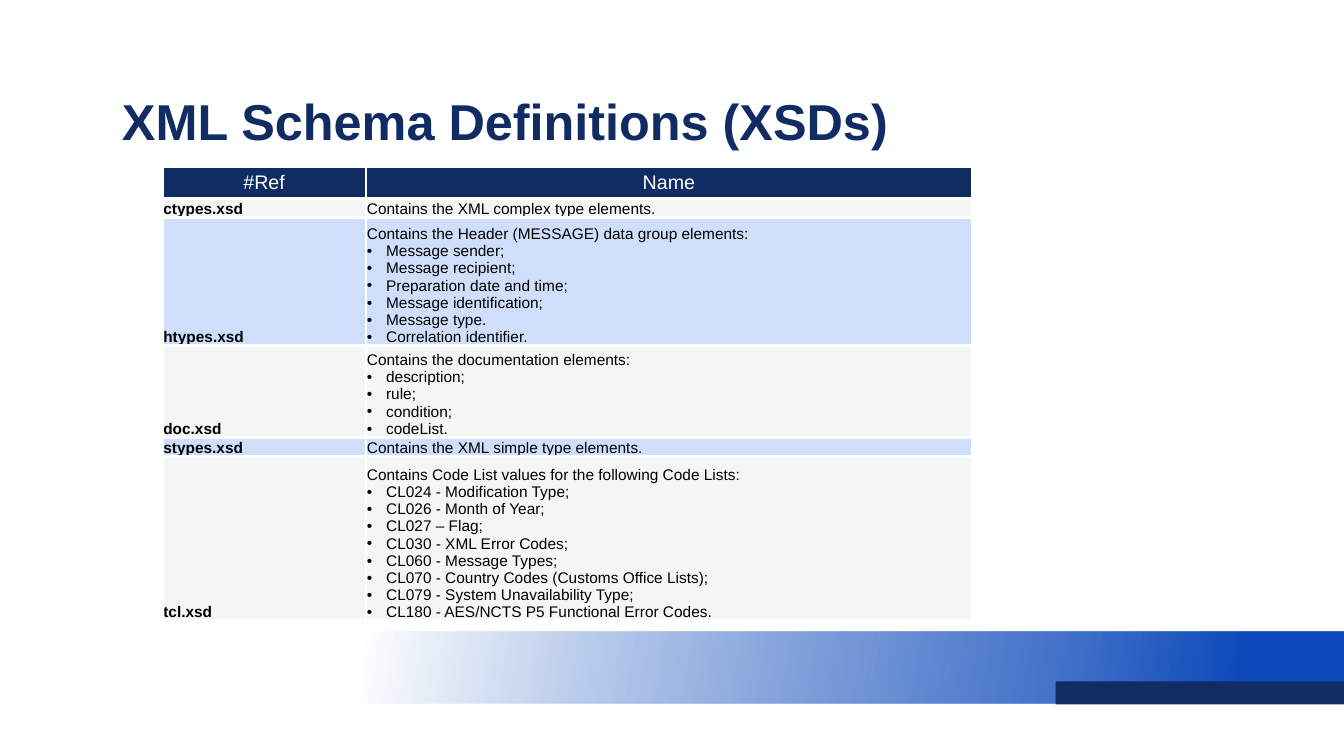
from lxml.etree import SubElement as Sub
from pptx import Presentation
from pptx.dml.color import RGBColor as Rgb
from pptx.enum.shapes import MSO_SHAPE as Shape
from pptx.enum.text import MSO_ANCHOR as Anchor, MSO_AUTO_SIZE as Auto, PP_ALIGN as Align
from pptx.oxml.ns import qn
from pptx.util import Inches, Pt

HUES = {"paper": "FEFFFF", "navy": "112C63", "ink": "000000", "gray": "E7E6E6",
        "sky": "C4D8FB", "blue": "0C49BA", "mid": "3265C5"}

ROWS = [
    ("ctypes.xsd", 0.19, "Contains the XML complex type elements.", []),
    ("htypes.xsd", 1.27, "Contains the Header (MESSAGE) data group elements:",
     ["Message sender;", "Message recipient;", "Preparation date and time;",
      "Message identification;", "Message type.", "Correlation identifier."]),
    ("doc.xsd", 0.91, "Contains the documentation elements:",
     ["description;", "rule;", "condition;", "codeList."]),
    ("stypes.xsd", 0.19, "Contains the XML simple type elements.", []),
    ("tcl.xsd", 1.63, "Contains Code List values for the following Code Lists:",
     ["CL024 - Modification Type;", "CL026 - Month of Year;", "CL027 – Flag;",
      "CL030 - XML Error Codes;", "CL060 - Message Types;",
      "CL070 - Country Codes (Customs Office Lists);",
      "CL079 - System Unavailability Type;",
      "CL180 - AES/NCTS P5 Functional Error Codes."]),
]


def write(para, text, size=11, hue="ink", bold=False, align=Align.LEFT, bullet=False):
    para.alignment = align
    if bullet:
        props = para._p.get_or_add_pPr()
        props.set("marL", str(Inches(0.19)))
        props.set("indent", str(-Inches(0.19)))
        Sub(props, qn("a:buFont"), typeface="Arial")
        Sub(props, qn("a:buChar"), char="•")
    run = para.add_run()
    run.text = text
    font = run.font
    font.name, font.size, font.bold = "Arial", Pt(size), bold
    font.color.rgb = Rgb.from_string(HUES[hue])


class Page:
    def __init__(self, deck):
        self.slide = deck.slides.add_slide(deck.slide_layouts[5])
        self.paint(self.slide.background.fill, "paper")

    def paint(self, fill, hue):
        fill.solid()
        fill.fore_color.rgb = Rgb.from_string(HUES[hue])

    def tint(self, node, hue, alpha):
        color = Sub(node, qn("a:srgbClr"), val=HUES[hue])
        Sub(color, qn("a:alpha"), val=str(alpha * 1000))

    def title(self, text, *box):
        head = self.slide.shapes.title
        head.left, head.top, head.width, head.height = map(Inches, box)
        frame = head.text_frame
        frame.word_wrap, frame.auto_size = True, Auto.NONE
        frame.vertical_anchor = Anchor.MIDDLE
        write(frame.paragraphs[0], text, size=36, hue="navy", bold=True)

    def band(self, hue, *box):
        bar = self.slide.shapes.add_shape(Shape.RECTANGLE, *map(Inches, box))
        bar.shadow.inherit = False
        bar.line.fill.background()
        self.paint(bar.fill, hue)
        return bar

    def fade(self, bar, stops, angle):
        bar.fill.gradient()
        grad = bar._element.spPr.find(qn("a:gradFill"))
        for node in list(grad):
            grad.remove(node)
        group = Sub(grad, qn("a:gsLst"))
        for spot, hue, alpha in stops:
            self.tint(Sub(group, qn("a:gs"), pos=str(spot * 1000)), hue, alpha)
        Sub(grad, qn("a:lin"), ang=str(angle * 60000), scaled="0")

    def cell(self, cell, hue, alpha, anchor, pads):
        cell.vertical_anchor = anchor
        (cell.margin_left, cell.margin_top,
         cell.margin_right, cell.margin_bottom) = map(Inches, pads)
        props = cell._tc.get_or_add_tcPr()
        for side in "LRTB":
            edge = Sub(props, qn("a:ln" + side), w=str(Pt(2.25)))
            self.tint(Sub(edge, qn("a:solidFill")), "paper", 100)
        self.tint(Sub(props, qn("a:solidFill")), hue, alpha)

    def table(self, heads, rows, widths, *spot):
        tall = [0.32] + [row[1] for row in rows]
        size = sum(widths), sum(tall)
        grid = self.slide.shapes.add_table(
            len(tall), len(widths), *map(Inches, spot + size)).table
        grid.first_row = grid.horz_banding = False
        for col, width in zip(grid.columns, widths):
            col.width = Inches(width)
        for row, height in zip(grid.rows, tall):
            row.height = Inches(height)
        for cell, text in zip(grid.rows[0].cells, heads):
            self.cell(cell, "navy", 100, Anchor.MIDDLE, (0.09, 0.05, 0.09, 0.05))
            write(cell.text_frame.paragraphs[0], text, size=14, hue="paper",
                  align=Align.CENTER)
        for num, (ref, _, lead, items) in enumerate(rows):
            left, right = grid.rows[num + 1].cells
            look = ("sky", 80) if num % 2 else ("gray", 40)
            for cell in (left, right):
                self.cell(cell, *look, Anchor.BOTTOM, (0.01, 0.01, 0.01, 0))
            write(left.text_frame.paragraphs[0], ref, bold=True)
            frame = right.text_frame
            write(frame.paragraphs[0], lead)
            for item in items:
                write(frame.add_paragraph(), item, bullet=True)


def main():
    deck = Presentation()
    deck.slide_width, deck.slide_height = Inches(13.33), Inches(7.5)
    page = Page(deck)
    wide = page.band("blue", 3.12, 6.27, 10.21, 0.71)
    page.fade(wide, [(5, "blue", 0), (72, "mid", 91), (90, "blue", 100)], 10)
    page.band("navy", 10.47, 6.76, 2.86, 0.23)
    page.title("XML Schema Definitions (XSDs)", 1.11, 0.84, 11.28, 0.71)
    page.table(("#Ref", "Name"), ROWS, (2.02, 6.01), 1.61, 1.65)
    deck.save("out.pptx")


if __name__ == "__main__":
    main()
